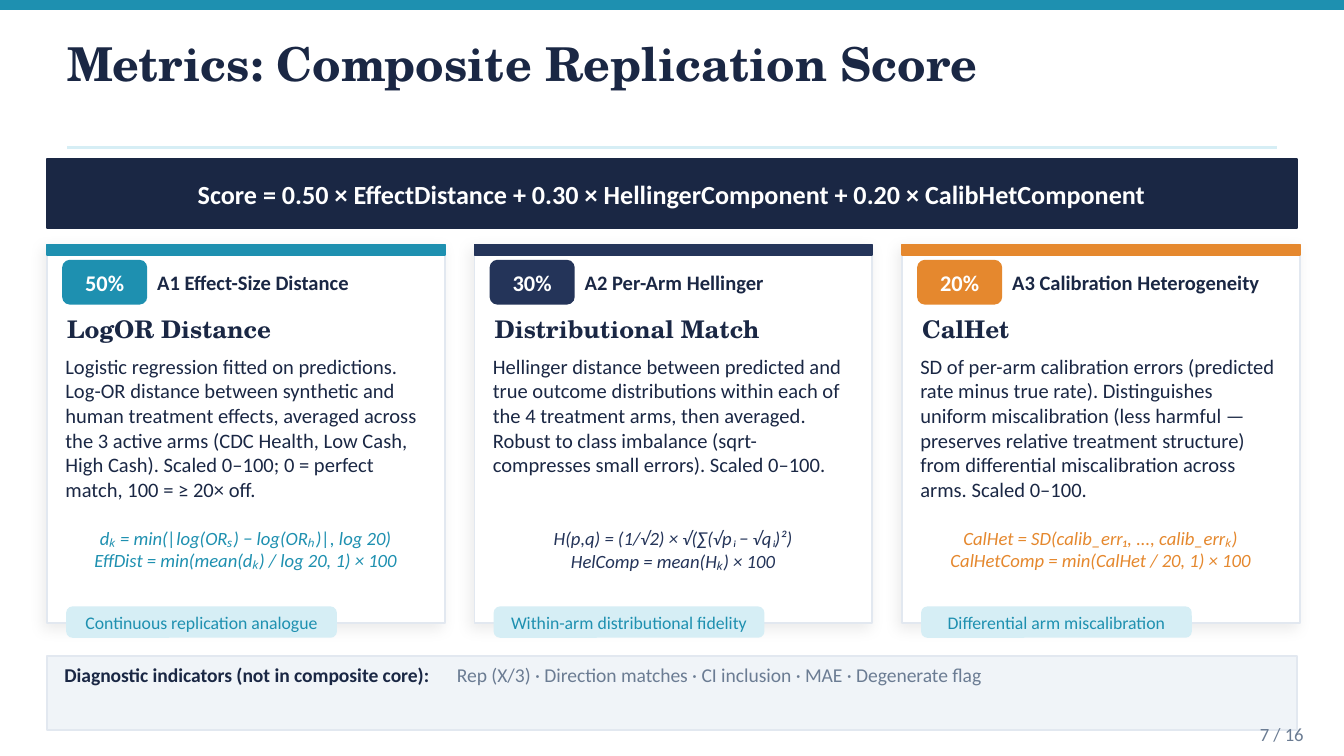
from lxml.etree import SubElement
from pptx import Presentation
from pptx.dml.color import RGBColor
from pptx.enum.shapes import MSO_CONNECTOR, MSO_SHAPE
from pptx.enum.text import MSO_ANCHOR, MSO_AUTO_SIZE, PP_ALIGN
from pptx.oxml.ns import qn
from pptx.util import Pt

HUES = {
    "teal": "1E90B0", "navy": "1A2744", "slate": "243459", "orange": "E5882E",
    "ice": "D6EEF5", "edge": "E2E8F0", "mist": "F0F4F8", "grey": "6B7C93",
    "white": "FFFFFF", "black": "000000",
}
SANS, SERIF = "Calibri", "TeX Gyre Schola"
TITLE = "Metrics: Composite Replication Score"
SCORE = "Score = 0.50 × EffectDistance + 0.30 × HellingerComponent + 0.20 × CalibHetComponent"
CARDS = [
    {
        "hue": "teal", "weight": "50%", "label": "A1 Effect-Size Distance",
        "head": "LogOR Distance", "gap": 13.4,
        "body": "Logistic regression fitted on predictions. Log-OR distance between "
                "synthetic and human treatment effects, averaged across the 3 active arms "
                "(CDC Health, Low Cash, High Cash). Scaled 0–100; 0 = perfect match, "
                "100 = ≥ 20× off.",
        "maths": ["dₖ = min(|log(ORₛ) − log(ORₕ)|, log 20)",
                  "EffDist = min(mean(dₖ) / log 20, 1) × 100"],
        "tag": "Continuous replication analogue",
    },
    {
        "hue": "slate", "weight": "30%", "label": "A2 Per-Arm Hellinger",
        "head": "Distributional Match", "gap": 26.8,
        "body": "Hellinger distance between predicted and true outcome distributions "
                "within each of the 4 treatment arms, then averaged. Robust to class "
                "imbalance (sqrt-compresses small errors). Scaled 0–100.",
        "maths": ["H(p,q) = (1/√2) × √(∑(√pᵢ − √qᵢ)²)", "HelComp = mean(Hₖ) × 100"],
        "tag": "Within-arm distributional fidelity",
    },
    {
        "hue": "orange", "weight": "20%", "label": "A3 Calibration Heterogeneity",
        "head": "CalHet", "gap": 13.4,
        "body": "SD of per-arm calibration errors (predicted rate minus true rate). "
                "Distinguishes uniform miscalibration (less harmful — preserves relative "
                "treatment structure) from differential miscalibration across arms. "
                "Scaled 0–100.",
        "maths": ["CalHet = SD(calib_err₁, ..., calib_errₖ)",
                  "CalHetComp = min(CalHet / 20, 1) × 100"],
        "tag": "Differential arm miscalibration",
    },
]
NOTES = [
    ("Diagnostic indicators (not in composite core):", 34.5, 226, "navy", True),
    ("Rep (X/3) · Direction matches · CI inclusion · MAE · Degenerate flag",
     244.8, 370, "grey", False),
]
PAGE = "7 / 16"
EDGE, SPAN, CARD, STEP, TOP = 25.2, 669.6, 213.1, 229, 131


def rgb(hue):
    """Return the named colour."""
    return RGBColor.from_string(HUES[hue])


def style(par, size, hue, bold=False, font=SANS, align=PP_ALIGN.LEFT, italic=False):
    """Format a paragraph and its runs."""
    par.alignment = align
    for run in par.runs:
        face = run.font
        face.name, face.size, face.bold, face.italic = font, Pt(size), bold, italic
        face.color.rgb = rgb(hue)


def fit(frame, anchor=MSO_ANCHOR.MIDDLE):
    """Wrap a text frame without margins."""
    frame.word_wrap, frame.auto_size = True, MSO_AUTO_SIZE.NONE
    frame.vertical_anchor = anchor
    frame.margin_left = frame.margin_right = frame.margin_top = frame.margin_bottom = 0


def block(slide, box, fill, line=None, curve=None):
    """Add a flat rectangle, rounded when a curve is given."""
    kind = MSO_SHAPE.ROUNDED_RECTANGLE if curve else MSO_SHAPE.RECTANGLE
    shape = slide.shapes.add_shape(kind, *map(Pt, box))
    if curve:
        shape.adjustments[0] = curve
    shape.shadow.inherit = False
    shape.fill.solid()
    shape.fill.fore_color.rgb = rgb(fill)
    shape.line.color.rgb = rgb(line or fill)
    shape.line.width = Pt(1)
    return shape


def write(shape, text, *look, **more):
    """Set one formatted line of text in a shape."""
    fit(shape.text_frame)
    shape.text_frame.text = text
    style(shape.text_frame.paragraphs[0], *look, **more)


def label(slide, box, text, *look, **more):
    """Add a one-line text box."""
    write(slide.shapes.add_textbox(*map(Pt, box)), text, *look, **more)


def shade(shape):
    """Give a shape a faint soft shadow."""
    effects = shape._element.spPr.find(qn("a:effectLst"))
    cast = SubElement(effects, qn("a:outerShdw"), blurRad=str(Pt(8)), dist=str(Pt(3)),
                      dir="8100000", algn="bl", rotWithShape="0")
    tint = SubElement(cast, qn("a:srgbClr"), val=HUES["black"])
    SubElement(tint, qn("a:alpha"), val="8000")


def card(slide, left, item):
    """Draw one metric card."""
    hue, mid = item["hue"], PP_ALIGN.CENTER
    shade(block(slide, (left, TOP, CARD, 203), "white", "edge"))
    block(slide, (left, TOP, CARD, 5.8), hue)
    badge = block(slide, (left + 8.6, TOP + 8.7, 44.6, 23), hue, curve=0.16)
    write(badge, item["weight"], 12, "white", True, align=mid)
    label(slide, (left + 59, TOP + 10, 144, 20.2), item["label"], 11, "navy", True)
    label(slide, (left + 10.8, TOP + 34.6, 191.5, 21.6), item["head"],
          13, "navy", True, font=SERIF)

    box = slide.shapes.add_textbox(Pt(left + 9.8), Pt(TOP + 58.5), Pt(193), Pt(126))
    frame = box.text_frame
    fit(frame, MSO_ANCHOR.TOP)
    frame.text = "\n".join([item["body"], *item["maths"]])
    first, *rest = frame.paragraphs
    style(first, 11, "navy")
    for par in rest:
        style(par, 10, hue, align=mid, italic=True)
    rest[0].space_before = Pt(item["gap"])

    tag = block(slide, (left + 10.8, TOP + 194.4, 144, 15.8), "ice", curve=0.18)
    write(tag, item["tag"], 9.5, "teal", align=mid)


def main():
    """Build the slide and save it."""
    deck = Presentation()
    deck.slide_width, deck.slide_height = Pt(720), Pt(405)
    slide = deck.slides.add_slide(deck.slide_layouts[5])
    block(slide, (0, 0, 720, 5), "teal")

    title = slide.shapes.title
    title.left, title.top, title.width, title.height = map(Pt, (36, 13, 648, 41.8))
    write(title, TITLE, 25, "navy", True, font=SERIF)

    rule = slide.shapes.add_connector(
        MSO_CONNECTOR.STRAIGHT, Pt(36), Pt(79.2), Pt(684), Pt(79.2))
    rule.line.color.rgb, rule.line.width = rgb("ice"), Pt(1.5)
    SubElement(rule._element.spPr, qn("a:effectLst"))

    bar = block(slide, (EDGE, 85, SPAN, 37.4), "navy")
    write(bar, SCORE, 14, "white", True, align=PP_ALIGN.CENTER)
    for spot, item in enumerate(CARDS):
        card(slide, EDGE + spot * STEP, item)

    block(slide, (EDGE, 351.4, SPAN, 39.6), "mist", "edge")
    for text, left, width, hue, bold in NOTES:
        label(slide, (left, 352.8, width, 17.3), text, 10.5, hue, bold)
    label(slide, (633.6, 385.2, 64.8, 15.8), PAGE, 10, "grey", align=PP_ALIGN.RIGHT)
    deck.save("out.pptx")


if __name__ == "__main__":
    main()
